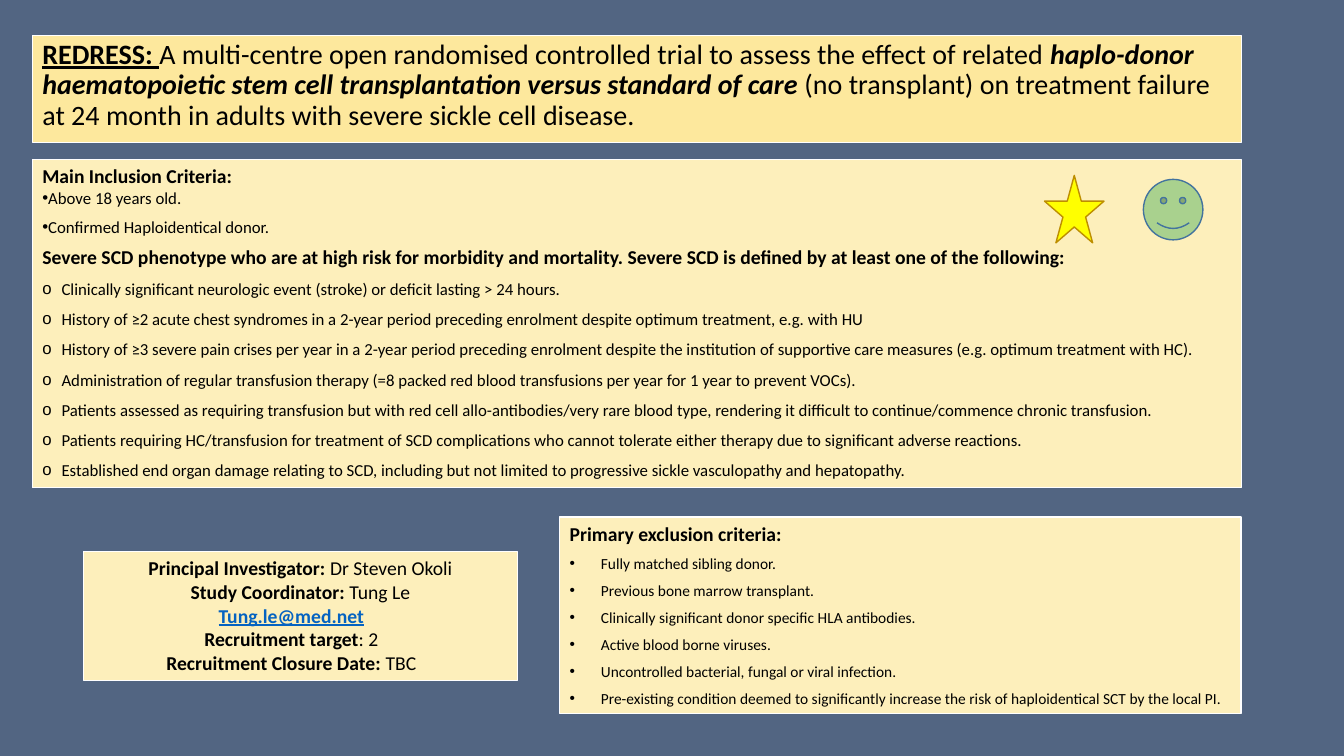
from pptx import Presentation
from pptx.dml.color import RGBColor
from pptx.enum.shapes import MSO_SHAPE as SHAPE
from pptx.enum.text import MSO_ANCHOR as ANCHOR, MSO_AUTO_SIZE as AUTO, PP_ALIGN as ALIGN
from pptx.oxml.ns import qn
from pptx.util import Inches, Pt
from lxml import etree

COLORS = {"back": "526582", "title": "FDE89D", "panel": "FDEFBB", "edge": "FFFFFF",
          "text": "000000", "link": "0563C1", "star": "FFFF00", "star_edge": "BD8E00",
          "face": "A9D18E", "face_edge": "43739E"}
FONT = "Calibri"

# Runs are (text, style): b bold, i italic, u underlined
TITLE = [
    ("REDRESS: ", "bu"),
    ("A multi-centre open randomised controlled trial to assess the effect of related ", ""),
    ("haplo-donor haematopoietic stem cell transplantation versus standard of care ", "bi"),
    ("(no transplant) on treatment failure at 24 month in adults with severe sickle cell disease.", ""),
]
INCLUSION_HEAD = "Main Inclusion Criteria:"
INCLUSION = ["Above 18 years old.", "Confirmed Haploidentical donor."]
SEVERE_HEAD = ("Severe SCD phenotype who are at high risk for morbidity and mortality. "
               "Severe SCD is defined by at least one of the following:")
SEVERE = [
    "Clinically significant neurologic event (stroke) or deficit lasting > 24 hours.",
    "History of ≥2 acute chest syndromes in a 2-year period preceding enrolment despite "
    "optimum treatment, e.g. with HU",
    "History of ≥3 severe pain crises per year in a 2-year period preceding enrolment despite "
    "the institution of supportive care measures (e.g. optimum treatment with HC).",
    "Administration of regular transfusion therapy (=8 packed red blood transfusions per year "
    "for 1 year to prevent VOCs).",
    "Patients assessed as requiring transfusion but with red cell allo-antibodies/very rare "
    "blood type, rendering it difficult to continue/commence chronic transfusion.",
    "Patients requiring HC/transfusion for treatment of SCD complications who cannot tolerate "
    "either therapy due to significant adverse reactions.",
    "Established end organ damage relating to SCD, including but not limited to progressive "
    "sickle vasculopathy and hepatopathy.",
]
EXCLUSION_HEAD = "Primary exclusion criteria:"
EXCLUSION = [
    "Fully matched sibling donor.",
    "Previous bone marrow transplant.",
    "Clinically significant donor specific HLA antibodies.",
    "Active blood borne viruses.",
    "Uncontrolled bacterial, fungal or viral infection.",
    "Pre-existing condition deemed to significantly increase the risk of haploidentical SCT "
    "by the local PI.",
]
EMAIL = "Tung.le@med.net"
CONTACT = [
    [("Principal Investigator: ", "b"), ("Dr Steven Okoli", "")],
    [("Study Coordinator: ", "b"), ("Tung Le", "")],
    [(EMAIL, "bu")],
    [("Recruitment target", "b"), (": 2", "")],
    [("Recruitment Closure Date: ", "b"), ("TBC", "")],
]


def rgb(name):
    return RGBColor.from_string(COLORS[name])


def paint(sp, fill, edge, width):
    sp.fill.solid()
    sp.fill.fore_color.rgb = rgb(fill)
    sp.line.color.rgb = rgb(edge)
    sp.line.width = Pt(width)


def set_panel(sp, box, fill, width=0.75):
    """Place and colour a text panel and return its text frame."""
    sp.left, sp.top, sp.width, sp.height = map(Inches, box)
    paint(sp, fill, "edge", width)
    tf = sp.text_frame
    tf.auto_size = AUTO.NONE
    tf.word_wrap = True
    tf.vertical_anchor = ANCHOR.TOP
    return tf


def add_line(tf, runs, size, bullet=None, hang=0, after=0, spacing=1.0, align=ALIGN.LEFT):
    """Write the next paragraph, using the empty first one if it is free."""
    p = tf.paragraphs[0] if not tf.text else tf.add_paragraph()
    p.alignment, p.line_spacing = align, spacing
    p.space_before, p.space_after = Pt(0), Pt(after)
    pPr = p._p.get_or_add_pPr()
    pPr.set("marL", str(Inches(hang)))
    pPr.set("indent", str(-Inches(hang)))
    if bullet:
        etree.SubElement(pPr, qn("a:buChar")).set("char", bullet)
    else:
        etree.SubElement(pPr, qn("a:buNone"))
    for text, style in runs:
        r = p.add_run()
        r.text = text
        r.font.name, r.font.size = FONT, Pt(size)
        r.font.bold, r.font.italic, r.font.underline = (c in style for c in "biu")
        r.font.color.rgb = rgb("link" if text == EMAIL else "text")
    return p


def add_list(tf, items, size, **form):
    for item in items:
        add_line(tf, [(item, "")], size, **form)


def add_icon(shapes, kind, box, fill, edge):
    sp = shapes.add_shape(kind, *map(Inches, box))
    sp.shadow.inherit = False
    paint(sp, fill, edge, 1)


def main():
    prs = Presentation()
    prs.slide_width, prs.slide_height = Inches(13.33), Inches(7.5)
    s = prs.slides.add_slide(prs.slide_layouts[3])
    for sp in list(s.placeholders)[3:]:
        sp._element.getparent().remove(sp._element)
    s.background.fill.solid()
    s.background.fill.fore_color.rgb = rgb("back")
    title, inclusion, exclusion = s.placeholders

    tf = set_panel(title, (0.32, 0.35, 11.99, 1.06), "title")
    add_line(tf, TITLE, 20, spacing=0.9)

    tf = set_panel(inclusion, (0.32, 1.58, 11.99, 3.26), "panel")
    add_line(tf, [(INCLUSION_HEAD, "b")], 14)
    add_list(tf, INCLUSION, 12, bullet="•", after=6)
    add_line(tf, [(SEVERE_HEAD, "b")], 14)
    add_list(tf, SEVERE, 12, bullet="o", hang=0.19, spacing=1.5)

    tf = set_panel(exclusion, (5.55, 5.13, 6.76, 1.95), "panel", 1)
    add_line(tf, [(EXCLUSION_HEAD, "b")], 14, after=6)
    add_list(tf, EXCLUSION, 11, bullet="•", hang=0.31, after=6)

    contact = s.shapes.add_shape(SHAPE.RECTANGLE, 0, 0, 0, 0)
    contact.shadow.inherit = False
    tf = set_panel(contact, (0.83, 5.47, 4.3, 1.28), "panel")
    for runs in CONTACT:
        p = add_line(tf, runs, 14, align=ALIGN.CENTER)
        if runs[0][0] == EMAIL:
            p._p.pPr.set("marR", str(Inches(0.18)))

    add_icon(s.shapes, SHAPE.SMILEY_FACE, (11.34, 1.78, 0.59, 0.6), "face", "face_edge")
    add_icon(s.shapes, SHAPE.STAR_5_POINT, (10.36, 1.74, 0.59, 0.67), "star", "star_edge")
    prs.save("out.pptx")


if __name__ == "__main__":
    main()
